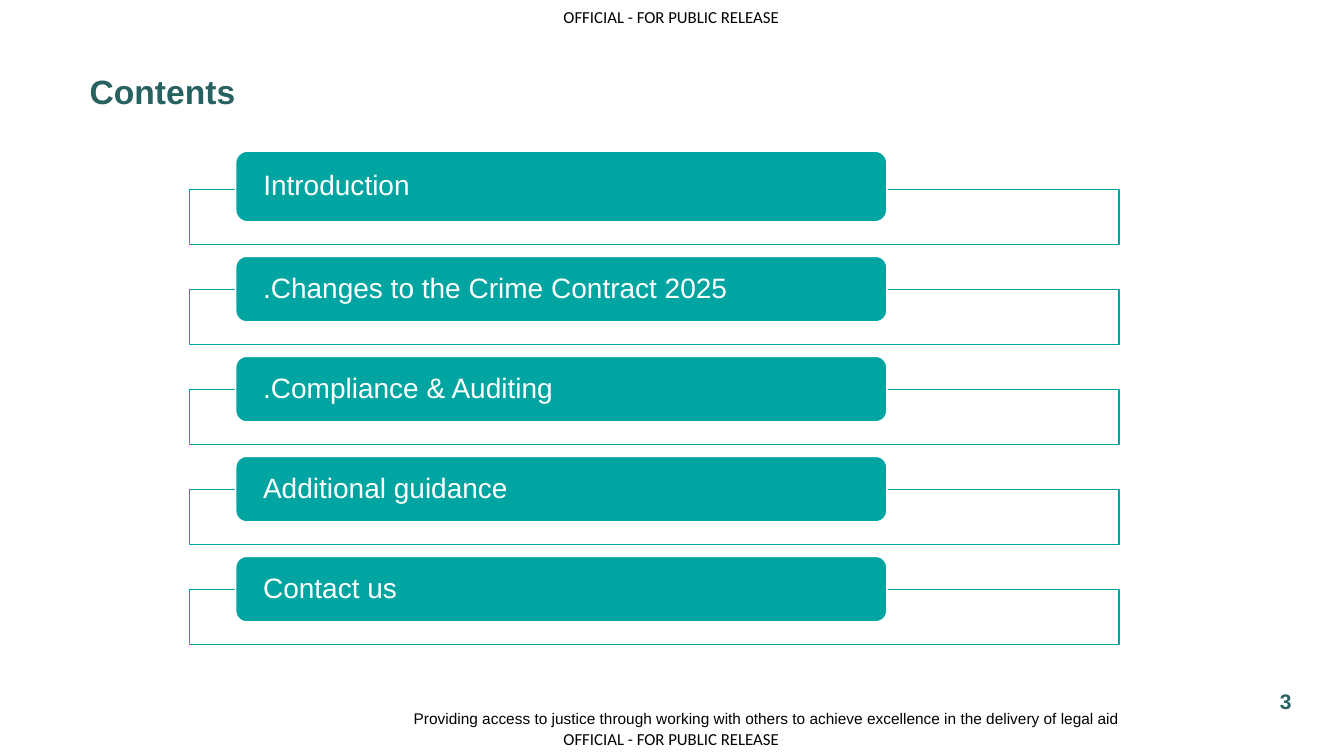
"""Build the contents slide: a title, five framed topic bars and the footer texts."""
from dataclasses import dataclass

from lxml.etree import SubElement
from pptx import Presentation
from pptx.dml.color import RGBColor
from pptx.enum.shapes import MSO_SHAPE as Preset
from pptx.enum.text import MSO_ANCHOR as Anchor, PP_ALIGN as Align
from pptx.oxml.ns import qn
from pptx.util import Cm, Pt

TITLE = "Contents"
MARKING = "OFFICIAL - FOR PUBLIC RELEASE"
MOTTO = ("Providing access to justice through working with others "
         "to achieve excellence in the delivery of legal aid")
PAGE_NUMBER = "3"
TOPICS = [
    ("Introduction", 1.78),
    (".Changes to the Crime Contract 2025", 1.65),
    (".Compliance & Auditing", 1.65),
    ("Additional guidance", 1.65),
    ("Contact us", 1.65),
]

SLIDE_SIZE = (33.87, 19.05)
TITLE_BOX = (2.26, 1.04, 29.8, 2.49)
MARKING_TOPS = (0.18, 18.36)
MOTTO_BOX = (8.2, 17.86, 20.02, 0.5)
NUMBER_BOX = (31.78, 17.15, 1.24, 1.02)
FRAME_LEFT, FRAME_TOP, FRAME_WIDTH, FRAME_HEIGHT = 4.78, 4.77, 23.42, 1.4
FRAME_PITCH = 2.52
BAR_LEFT, BAR_WIDTH, BAR_OVERLAP, BAR_INSET = 5.94, 16.41, 0.82, 0.61


@dataclass(frozen=True)
class Theme:
    """Colours, fonts and type sizes of the slide."""
    teal: RGBColor = RGBColor(0x00, 0xA5, 0xA1)
    dark_teal: RGBColor = RGBColor(0x27, 0x61, 0x60)
    white: RGBColor = RGBColor(0xFF, 0xFF, 0xFF)
    black: RGBColor = RGBColor(0x00, 0x00, 0x00)
    font: str = "Arial"
    marking_font: str = "Calibri"
    title_size: int = 24
    topic_size: int = 20
    number_size: int = 15
    marking_size: int = 12
    motto_size: int = 11
    line_width: int = 1
    frame_opacity: int = 90


THEME = Theme()


def place(shape, box):
    """Move and size a shape from a box in centimetres."""
    shape.left, shape.top, shape.width, shape.height = map(Cm, box)


def write(shape, text, size, color, align=Align.LEFT, font=THEME.font,
          bold=False, inset=0, anchor=Anchor.MIDDLE, wrap=True):
    """Write one formatted run in a shape and return its paragraph."""
    frame = shape.text_frame
    frame.word_wrap = wrap
    frame.vertical_anchor = anchor
    frame.margin_left = frame.margin_right = Cm(inset)
    frame.margin_top = frame.margin_bottom = 0
    paragraph = frame.paragraphs[0]
    paragraph.alignment = align
    run = paragraph.add_run()
    run.text = text
    run.font.name = font
    run.font.size = Pt(size)
    run.font.bold = bold
    run.font.color.rgb = color
    return paragraph


def add_text(slide, box, text, size, color, **options):
    """Add a text box holding one run."""
    write(slide.shapes.add_textbox(*map(Cm, box)), text, size, color, **options)


def add_block(slide, preset, box, fill, line):
    """Add a filled and outlined preset shape."""
    shape = slide.shapes.add_shape(preset, *map(Cm, box))
    shape.shadow.inherit = False
    shape.fill.solid()
    shape.fill.fore_color.rgb = fill
    shape.line.color.rgb = line
    shape.line.width = Pt(THEME.line_width)
    return shape


def add_topic(slide, index, topic, bar_height):
    """Add a frame with its topic bar overlapping the top edge."""
    top = FRAME_TOP + index * FRAME_PITCH
    frame = add_block(slide, Preset.RECTANGLE,
                      (FRAME_LEFT, top, FRAME_WIDTH, FRAME_HEIGHT),
                      THEME.white, THEME.teal)
    color = frame.fill._xPr.find(qn("a:solidFill"))[0]
    SubElement(color, qn("a:alpha"), val=str(THEME.frame_opacity * 1000))
    bar = add_block(slide, Preset.ROUNDED_RECTANGLE,
                    (BAR_LEFT, top + BAR_OVERLAP - bar_height, BAR_WIDTH, bar_height),
                    THEME.teal, THEME.white)
    paragraph = write(bar, topic, THEME.topic_size, THEME.white, inset=BAR_INSET)
    paragraph.line_spacing = 0.9


def main():
    """Build and save the presentation."""
    presentation = Presentation()
    presentation.slide_width, presentation.slide_height = map(Cm, SLIDE_SIZE)
    slide = presentation.slides.add_slide(presentation.slide_layouts[5])
    title = slide.shapes.title
    place(title, TITLE_BOX)
    write(title, TITLE, THEME.title_size, THEME.dark_teal, bold=True)
    for top in MARKING_TOPS:
        add_text(slide, (14.2, top, 5.54, 0.51), MARKING, THEME.marking_size,
                 THEME.black, font=THEME.marking_font, anchor=Anchor.TOP, wrap=False)
    for index, (topic, bar_height) in enumerate(TOPICS):
        add_topic(slide, index, topic, bar_height)
    add_text(slide, MOTTO_BOX, MOTTO, THEME.motto_size, THEME.black, align=Align.RIGHT)
    add_text(slide, NUMBER_BOX, PAGE_NUMBER, THEME.number_size, THEME.dark_teal,
             align=Align.CENTER, bold=True)
    presentation.save("out.pptx")


if __name__ == "__main__":
    main()
